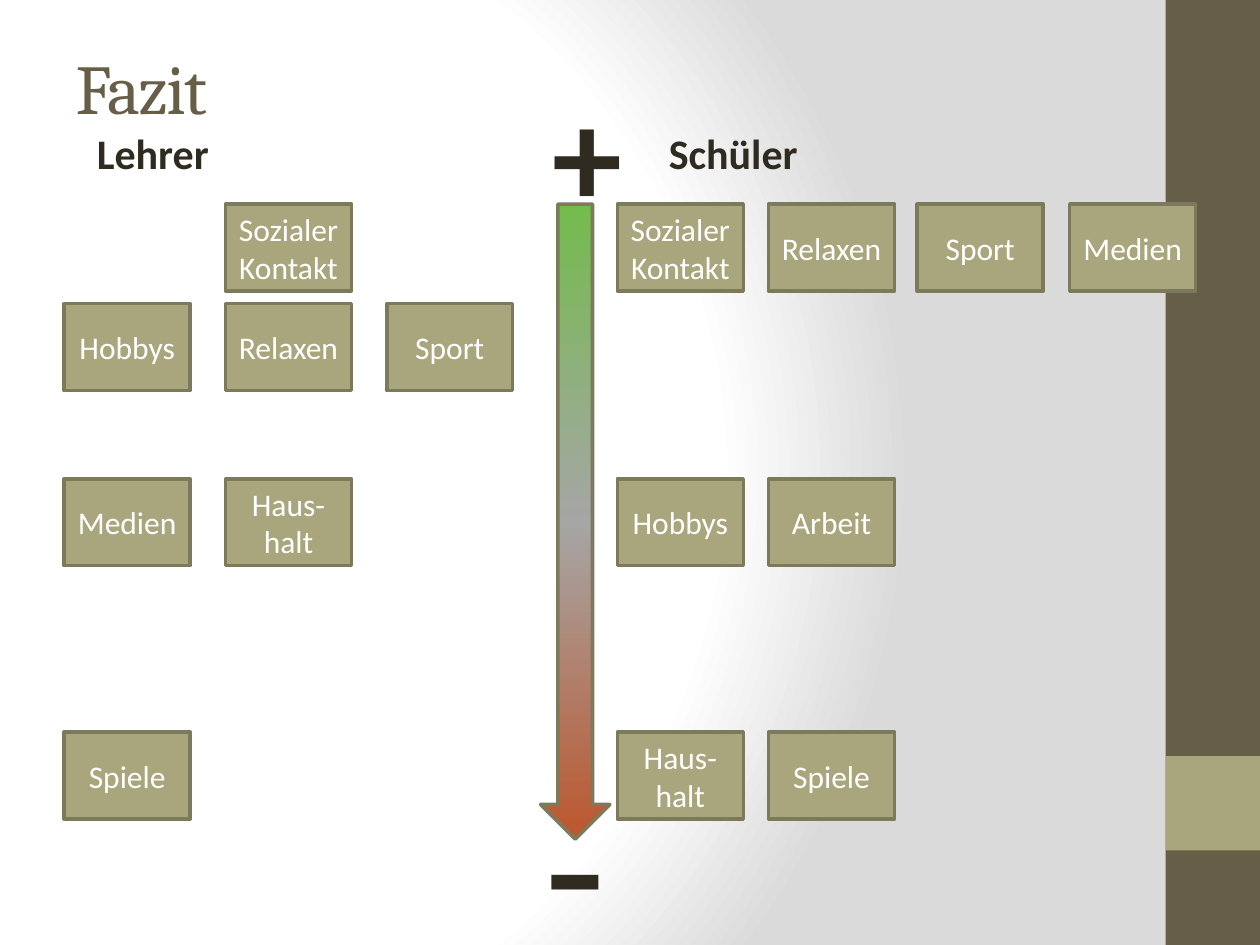
from pptx import Presentation
from pptx.dml.color import RGBColor
from pptx.enum.shapes import MSO_SHAPE
from pptx.enum.text import MSO_ANCHOR, MSO_AUTO_SIZE, PP_ALIGN
from pptx.oxml import parse_xml
from pptx.oxml.ns import nsdecls, qn
from pptx.util import Inches, Pt

RECTANGLE, DOWN_ARROW = MSO_SHAPE.RECTANGLE, MSO_SHAPE.DOWN_ARROW
MIDDLE = MSO_ANCHOR.MIDDLE
LEFT, CENTER = PP_ALIGN.LEFT, PP_ALIGN.CENTER
GROW = MSO_AUTO_SIZE.SHAPE_TO_FIT_TEXT

RADIAL = ('<a:path path="circle">'
          '<a:fillToRect l="20000" t="50000" r="100000" b="50000"/></a:path>')
DOWNWARD = '<a:lin ang="5400000" scaled="0"/>'

CARD_WIDTH, CARD_HEIGHT = 1, 0.69
TOP_ROW, SECOND_ROW, MIDDLE_ROW, BOTTOM_ROW = 1.62, 2.41, 3.8, 5.81
TEACHER_COLUMNS = [0.51, 1.79, 3.07]
PUPIL_COLUMNS = [4.9, 6.1, 7.28, 8.49]
TEACHER_RATINGS = {
    TOP_ROW: [None, "Sozialer Kontakt"],
    SECOND_ROW: ["Hobbys", "Relaxen", "Sport"],
    MIDDLE_ROW: ["Medien", "Haus-halt"],
    BOTTOM_ROW: ["Spiele"],
}
PUPIL_RATINGS = {
    TOP_ROW: ["Sozialer Kontakt", "Relaxen", "Sport", "Medien"],
    MIDDLE_ROW: ["Hobbys", "Arbeit"],
    BOTTOM_ROW: ["Haus-halt", "Spiele"],
}


def rgb(value):
    """Turn a hex string into a colour."""
    return RGBColor.from_string(value)


class RatingSlide:
    """Holds the style and the slide that is being built."""

    BROWN, OLIVE, EDGE, INK, WHITE = "675E47", "A9A57C", "7D7A5C", "2F2B20", "FFFFFF"
    HEADING_FONT, BODY_FONT = "Cambria", "Calibri"

    def __init__(self, slide):
        """Keep the slide to draw on."""
        self.slide = slide

    def gradient(self, fill, owner, stops, direction):
        """Give a fill the colour stops and the direction of a gradient."""
        fill.gradient()
        blank = next(owner.iter(qn("a:gradFill")))
        colours = "".join(
            f'<a:gs pos="{position * 1000}"><a:srgbClr val="{colour}"/></a:gs>'
            for position, colour in stops)
        blank.getparent().replace(blank, parse_xml(
            f'<a:gradFill {nsdecls("a")} rotWithShape="1">'
            f'<a:gsLst>{colours}</a:gsLst>{direction}</a:gradFill>'))

    def background(self, stops):
        """Fill the background with a radial gradient."""
        self.gradient(self.slide.background.fill, self.slide.element, stops, RADIAL)

    def set_text(self, frame, text, size, colour, align, font=BODY_FONT, bold=False):
        """Put one formatted paragraph into a text frame."""
        frame.word_wrap = True
        paragraph = frame.paragraphs[0]
        paragraph.text = text
        paragraph.alignment = align
        paragraph.font.name = font
        paragraph.font.size = Pt(size)
        paragraph.font.bold = bold
        paragraph.font.color.rgb = rgb(colour)
        return paragraph

    def title(self, text, left, top, width, height):
        """Place and format the title placeholder."""
        heading = self.slide.shapes.title
        heading.left, heading.top = Inches(left), Inches(top)
        heading.width, heading.height = Inches(width), Inches(height)
        heading.text_frame.vertical_anchor = MIDDLE
        paragraph = self.set_text(heading.text_frame, text, 40, self.BROWN, LEFT,
                                  self.HEADING_FONT)
        paragraph.runs[0].font._element.set("spc", "-100")

    def shape(self, kind, left, top, width, height):
        """Add a preset shape without a shadow."""
        shape = self.slide.shapes.add_shape(
            kind, Inches(left), Inches(top), Inches(width), Inches(height))
        shape.shadow.inherit = False
        return shape

    def outline(self, shape):
        """Draw the common edge around a shape."""
        shape.line.color.rgb = rgb(self.EDGE)
        shape.line.width = Pt(2)

    def band(self, top, height, colour):
        """Add a part of the side band."""
        band = self.shape(RECTANGLE, 9.25, top, 0.75, height)
        band.fill.solid()
        band.fill.fore_color.rgb = rgb(colour)
        band.line.fill.background()

    def scale_arrow(self, left, top, width, height, stops):
        """Add the arrow that runs from plus to minus."""
        arrow = self.shape(DOWN_ARROW, left, top, width, height)
        self.gradient(arrow.fill, arrow.element, stops, DOWNWARD)
        self.outline(arrow)

    def card(self, text, left, top):
        """Add one activity card."""
        card = self.shape(RECTANGLE, left, top, CARD_WIDTH, CARD_HEIGHT)
        card.fill.solid()
        card.fill.fore_color.rgb = rgb(self.OLIVE)
        self.outline(card)
        card.text_frame.vertical_anchor = MIDDLE
        self.set_text(card.text_frame, text, 18, self.WHITE, CENTER)

    def cards(self, columns, ratings):
        """Lay out the cards of one group by row and column."""
        for top, activities in ratings.items():
            for left, activity in zip(columns, activities):
                if activity:
                    self.card(activity, left, top)

    def label(self, text, left, top, width, height, size, align=LEFT, bold=True):
        """Add a text box."""
        box = self.slide.shapes.add_textbox(
            Inches(left), Inches(top), Inches(width), Inches(height))
        self.set_text(box.text_frame, text, size, self.INK, align, bold=bold)
        box.text_frame.auto_size = GROW


def main():
    """Build the slide and save it."""
    deck = Presentation()
    deck.slide_width, deck.slide_height = Inches(10), Inches(7.5)
    page = RatingSlide(deck.slides.add_slide(deck.slide_layouts[5]))
    page.background([(0, "FFFFFF"), (75, "FFFFFF"), (100, "DADADA")])
    page.band(0, 7.5, page.BROWN)
    page.band(6, 0.75, page.OLIVE)
    page.title("Fazit", 0.5, 0.3, 8.36, 0.77)
    page.scale_arrow(4.29, TOP_ROW, 0.55, 5.04,
                     [(0, "74BB4D"), (50, "A6A6A6"), (100, "BC572E")])
    page.label("+", 4.29, 0.49, 0.55, 1.45, 80, CENTER)
    page.label("-", 3.58, 5.81, 1.97, 2.04, 115, CENTER, bold=False)
    page.label("Lehrer", 0.67, 0.96, 3.34, 0.5, 24)
    page.label("Schüler", 5.21, 0.96, 3.34, 0.5, 24)
    page.cards(TEACHER_COLUMNS, TEACHER_RATINGS)
    page.cards(PUPIL_COLUMNS, PUPIL_RATINGS)
    deck.save("out.pptx")


if __name__ == "__main__":
    main()
